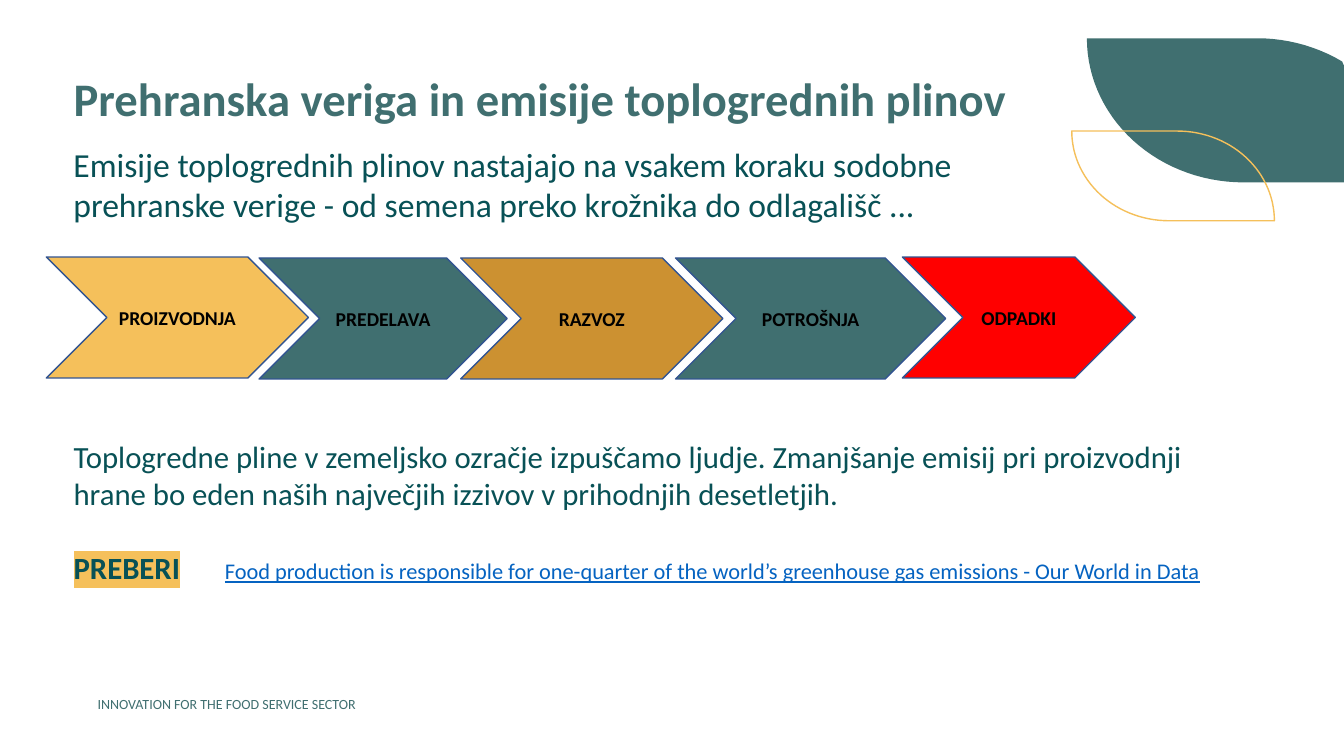
from math import cos, pi, sin

from lxml.etree import SubElement
from pptx import Presentation
from pptx.dml.color import RGBColor
from pptx.enum.shapes import MSO_SHAPE as Preset
from pptx.enum.text import MSO_ANCHOR as Anchor, MSO_AUTO_SIZE as AutoSize, PP_ALIGN as Align
from pptx.oxml.ns import qn
from pptx.util import Inches, Pt

SLIDE_WIDTH, SLIDE_HEIGHT = 13.33, 7.5
FONT = "Calibri"
GREEN, DARK_GREEN, YELLOW, OCHRE, RED = "406F70", "085156", "F5C05B", "CC9131", "FF0000"
BLACK, OUTLINE_BLUE, LINK_BLUE = "000000", "325491", "0563C1"

CHAIN_STEPS = [
    ("PROIZVODNJA", 0.46, 2.55, 2.6, YELLOW),
    ("PREDELAVA", 2.57, 2.56, 2.46, GREEN),
    ("RAZVOZ", 4.57, 2.56, 2.6, OCHRE),
    ("POTROŠNJA", 6.7, 2.56, 2.68, GREEN),
    ("ODPADKI", 8.95, 2.55, 2.31, RED),
]


def color(value):
    return RGBColor.from_string(value)


def add_text(paragraph, text, size, fill, bold=False, underline=False, highlight=None):
    run = paragraph.add_run()
    run.text = text
    font = run.font
    font.size = Pt(size)
    font.bold = bold
    font.underline = underline
    font.color.rgb = color(fill)
    if highlight:
        marker = SubElement(run._r.get_or_add_rPr(), qn("a:highlight"))
        SubElement(marker, qn("a:srgbClr"), val=highlight)
    font.name = FONT


def place(shape, left, top, width, height):
    shape.left, shape.top = Inches(left), Inches(top)
    shape.width, shape.height = Inches(width), Inches(height)


def prepare_frame(shape, anchor=Anchor.TOP, wrap=True):
    frame = shape.text_frame
    frame.word_wrap = wrap
    frame.auto_size = AutoSize.NONE
    frame.vertical_anchor = anchor
    return frame


def add_leaf(slide, left, top, width, height, fill=None, line=None):
    radius = 0.48 * width
    right, bottom = left + width, top + height
    angles = [step * pi / 60 for step in range(31)]
    upper = [(right - radius + radius * sin(a), bottom - height * cos(a)) for a in angles]
    lower = [(left + radius - radius * sin(a), top + height * cos(a)) for a in angles]
    points = [(Inches(min(x, SLIDE_WIDTH)), Inches(y)) for x, y in upper + lower]
    builder = slide.shapes.build_freeform(*points[0], scale=1.0)
    builder.add_line_segments(points[1:], close=True)
    leaf = builder.convert_to_shape()
    leaf.shadow.inherit = False
    if fill:
        leaf.fill.solid()
        leaf.fill.fore_color.rgb = color(fill)
    else:
        leaf.fill.background()
    if line:
        leaf.line.color.rgb = color(line)
        leaf.line.width = Pt(1)
    else:
        leaf.line.fill.background()


def add_text_box(slide, box, text, size, fill):
    shape = slide.shapes.add_textbox(*map(Inches, box))
    add_text(prepare_frame(shape).paragraphs[0], text, size, fill)


def fill_title(slide, box):
    title = slide.shapes.title
    place(title, *box)
    paragraph = prepare_frame(title).paragraphs[0]
    paragraph.alignment = Align.LEFT
    paragraph.line_spacing = 0.9
    add_text(paragraph, "Prehranska veriga in emisije toplogrednih plinov", 33.3, GREEN, bold=True)


def add_chain(slide, height):
    for label, left, top, width, fill in CHAIN_STEPS:
        chevron = slide.shapes.add_shape(Preset.CHEVRON, *map(Inches, (left, top, width, height)))
        chevron.shadow.inherit = False
        chevron.fill.solid()
        chevron.fill.fore_color.rgb = color(fill)
        chevron.line.color.rgb = color(OUTLINE_BLUE)
        chevron.line.width = Pt(1)
        paragraph = prepare_frame(chevron, Anchor.MIDDLE, wrap=False).paragraphs[0]
        paragraph.alignment = Align.CENTER
        add_text(paragraph, label, 14, BLACK, bold=True)


def remove_bullet(paragraph):
    properties = paragraph._p.get_or_add_pPr()
    properties.set("marL", "0")
    properties.set("indent", "0")
    SubElement(properties, qn("a:buNone"))
    return properties


def fill_body(slide, box):
    body = slide.placeholders[1]
    place(body, *box)
    frame = prepare_frame(body)
    message = frame.paragraphs[0]
    remove_bullet(message)
    message.space_before = Pt(0)
    add_text(message, "Toplogredne pline v zemeljsko ozračje izpuščamo ljudje. Zmanjšanje emisij pri "
             "proizvodnji hrane bo eden naših največjih izzivov v prihodnjih desetletjih.", 22, DARK_GREEN)
    reading = frame.add_paragraph()
    tabs = SubElement(remove_bullet(reading), qn("a:tabLst"))
    SubElement(tabs, qn("a:tab"), pos=str(Inches(1.19)), algn="l")
    reading.space_before = Pt(27)
    add_text(reading, "PREBERI", 22, DARK_GREEN, bold=True, highlight=YELLOW)
    add_text(reading, "\t", 22, DARK_GREEN)
    add_text(reading, "Food production is responsible for one-quarter of the world’s greenhouse gas "
             "emissions - Our World in Data", 16, LINK_BLUE, underline=True)


def main():
    presentation = Presentation()
    presentation.slide_width = Inches(SLIDE_WIDTH)
    presentation.slide_height = Inches(SLIDE_HEIGHT)
    slide = presentation.slides.add_slide(presentation.slide_layouts[1])
    add_text_box(slide, (0.87, 6.85, 11.59, 0.27), "INNOVATION FOR THE FOOD SERVICE SECTOR", 10, GREEN)
    add_leaf(slide, 10.78, 0.38, 3.24, 1.43, fill=GREEN)
    add_leaf(slide, 10.63, 1.3, 2.01, 0.89, line=YELLOW)
    fill_title(slide, (0.63, 0.71, 9.69, 0.86))
    add_chain(slide, 1.2)
    add_text_box(slide, (0.63, 1.38, 9.44, 0.91), "Emisije toplogrednih plinov nastajajo na vsakem koraku "
                 "sodobne prehranske verige - od semena preko krožnika do odlagališč ...", 24, DARK_GREEN)
    fill_body(slide, (0.63, 4.29, 11.69, 1.58))
    presentation.save("out.pptx")


if __name__ == "__main__":
    main()
